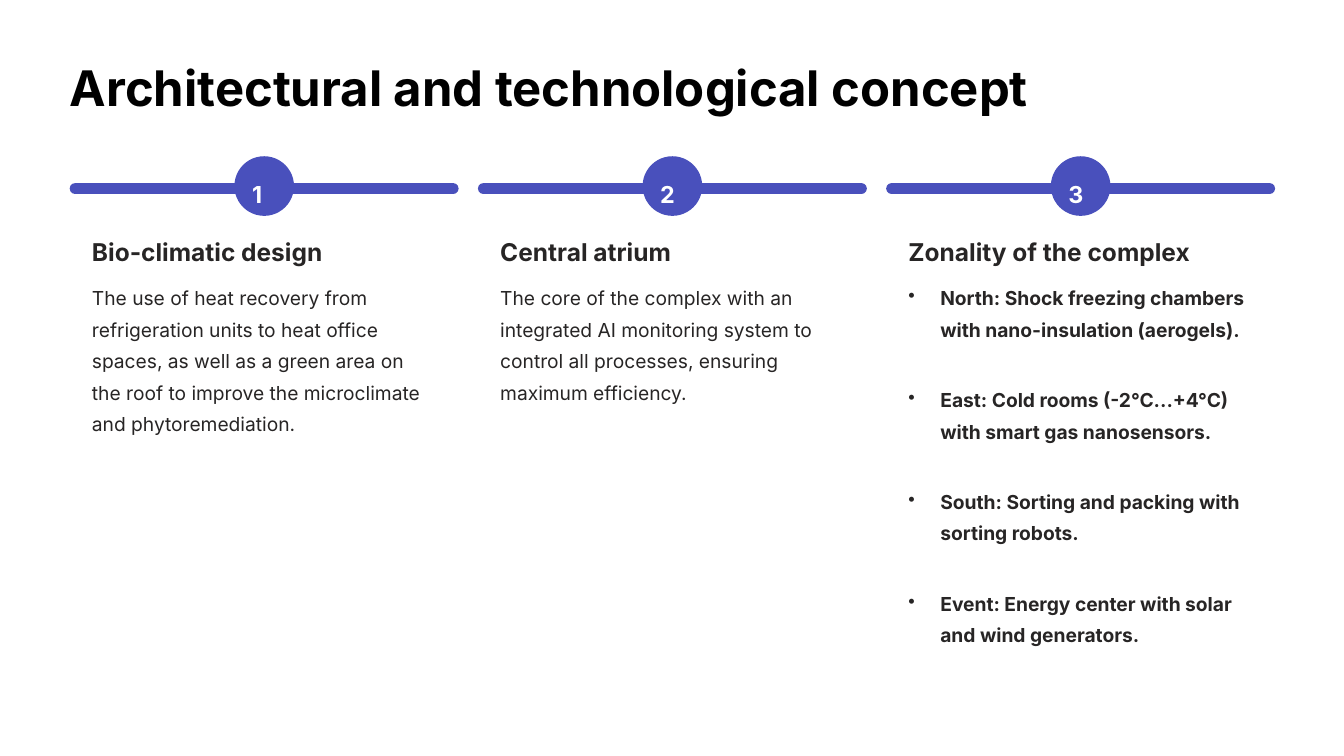
import pptx
import pptx.util
import pptx.dml.color
import pptx.enum.shapes
import pptx.enum.text
from lxml import etree

Inches, Pt = pptx.util.Inches, pptx.util.Pt
RGBColor = pptx.dml.color.RGBColor

# Content
TITLE = "Architectural and technological concept"
COLUMNS = [
    {"heading": "Bio-climatic design", "heading_width": 3.63, "body_height": 2.26,
     "body": "The use of heat recovery from refrigeration units to heat office spaces, "
             "as well as a green area on the roof to improve the microclimate "
             "and phytoremediation."},
    {"heading": "Central atrium", "heading_width": 3.12, "body_height": 1.89,
     "body": "The core of the complex with an integrated AI monitoring system "
             "to control all processes, ensuring maximum efficiency."},
    {"heading": "Zonality of the complex", "heading_width": 3.57,
     "zones": ["North: Shock freezing chambers with nano-insulation (aerogels).",
               "East: Cold rooms (-2°C...+4°C) with smart gas nanosensors.",
               "South: Sorting and packing with sorting robots.",
               "Event: Energy center with solar and wind generators."]},
]

# Style
FONT = "Inter"
BLACK = RGBColor(0x00, 0x00, 0x00)
WHITE = RGBColor(0xFF, 0xFF, 0xFF)
INK = RGBColor(0x27, 0x25, 0x25)
INDIGO = RGBColor(0x49, 0x50, 0xBC)

# Layout in inches
MARGIN, COLUMN_PITCH, COLUMN_WIDTH = 0.83, 4.86, 4.63
BAR_TOP, BAR_HEIGHT = 2.18, 0.13
BADGE_TOP, BADGE_SIZE = 1.86, 0.71
TEXT_INSET, BODY_TOP, BODY_WIDTH = 0.265, 3.31, 4.09
ZONE_PITCH, ZONE_HEIGHT, BULLET_INDENT = 1.213, 1.13, 0.38

deck = pptx.Presentation()
deck.slide_width, deck.slide_height = Inches(16), Inches(9)
slide = deck.slides.add_slide(deck.slide_layouts[6])
slide.background.fill.solid()
slide.background.fill.fore_color.rgb = WHITE


def add_text(text, left, top, width, height, size, leading, color,
             bold=True, wrap=False, bullet=False):
    box = slide.shapes.add_textbox(Inches(left), Inches(top), Inches(width), Inches(height))
    frame = box.text_frame
    frame.margin_left = frame.margin_right = frame.margin_top = frame.margin_bottom = 0
    frame.word_wrap = wrap
    frame.vertical_anchor = pptx.enum.text.MSO_ANCHOR.TOP
    paragraph = frame.paragraphs[0]
    if bullet:
        properties = paragraph._p.get_or_add_pPr()
        properties.set("marL", str(Inches(BULLET_INDENT)))
        properties.set("indent", str(-Inches(BULLET_INDENT)))
        mark = etree.SubElement(properties, pptx.oxml.ns.qn("a:buChar"))
        mark.set("char", "•")
    paragraph.line_spacing = Pt(leading)
    run = paragraph.add_run()
    run.text = text
    run.font.name, run.font.size, run.font.bold = FONT, Pt(size), bold
    run.font.color.rgb = color


def add_solid(kind, left, top, width, height):
    solid = slide.shapes.add_shape(kind, Inches(left), Inches(top), Inches(width), Inches(height))
    solid.shadow.inherit = False
    solid.fill.solid()
    solid.fill.fore_color.rgb = INDIGO
    solid.line.fill.background()
    return solid


# Title
add_text(TITLE, MARGIN, 0.65, 11.49, 0.74, 42, 53, BLACK)

# Numbered columns
SHAPES = pptx.enum.shapes.MSO_SHAPE
for index, column in enumerate(COLUMNS):
    left = MARGIN + index * COLUMN_PITCH
    badge_left = left + (COLUMN_WIDTH - BADGE_SIZE) / 2
    text_left = left + TEXT_INSET

    bar = add_solid(SHAPES.ROUNDED_RECTANGLE, left, BAR_TOP, COLUMN_WIDTH, BAR_HEIGHT)
    bar.adjustments[0] = 0.5
    badge = add_solid(SHAPES.ROUNDED_RECTANGLE, badge_left, BADGE_TOP, BADGE_SIZE, BADGE_SIZE)
    badge.adjustments[0] = 0.5
    add_text(str(index + 1), badge_left + 0.21, 2.03, 0.28, 0.35, 20, 32.5, WHITE)
    add_text(column["heading"], text_left, 2.8, column["heading_width"], 0.37, 21, 26.5, INK)

    if "body" in column:
        add_text(column["body"], text_left, BODY_TOP, BODY_WIDTH, column["body_height"],
                 16.5, 27, INK, bold=False, wrap=True)
    for row, zone in enumerate(column.get("zones", [])):
        add_text(zone, text_left, BODY_TOP + row * ZONE_PITCH, BODY_WIDTH, ZONE_HEIGHT,
                 16.5, 27, INK, wrap=True, bullet=True)

deck.save("out.pptx")
